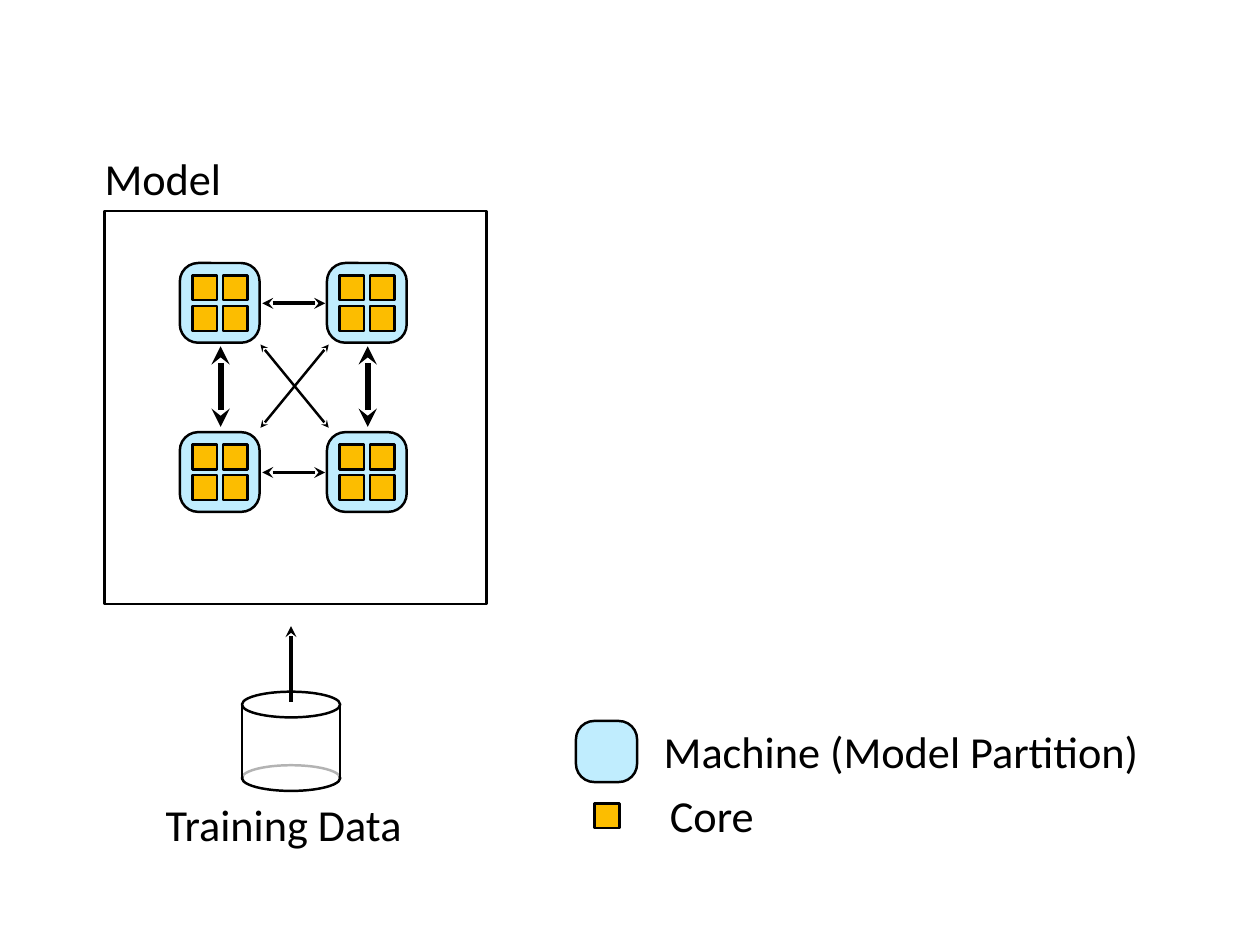
from itertools import product

from lxml.etree import SubElement
from pptx import Presentation
from pptx.dml.color import RGBColor
from pptx.enum.shapes import MSO_CONNECTOR, MSO_SHAPE
from pptx.enum.text import MSO_ANCHOR, MSO_AUTO_SIZE, PP_ALIGN
from pptx.oxml.ns import qn
from pptx.util import Inches, Pt

BLACK = RGBColor(0x00, 0x00, 0x00)
WHITE = RGBColor(0xFF, 0xFF, 0xFF)
MACHINE_BLUE = RGBColor(0xC0, 0xED, 0xFE)
CORE_GOLD = RGBColor(0xFC, 0xBD, 0x00)

# Content: text, left, top, width
LABELS = [
    ("Model", 1.18, 1.67, 1.4),
    ("Machine (Model Partition)", 7.49, 8.14, 5.42),
    ("Core", 7.56, 8.86, 1.18),
    ("Training Data", 1.87, 8.96, 2.82),
]
LABEL_HEIGHT = 0.68
FRAME = (1.18, 2.38, 4.31, 4.44)

# Machine grid and the cores inside each machine
MACHINE_COLUMNS = (2.03, 3.69)
MACHINE_ROWS = (2.97, 4.88)
MACHINE_SIZE = 0.9
CORE_OFFSETS = (0.14, 0.485)
CORE_SIZE = 0.28

# Legend samples
LEGEND_MACHINE = (6.5, 8.14, 0.69, 0.69)
LEGEND_CORE = (6.71, 9.07, CORE_SIZE, CORE_SIZE)

# Training data cylinder
CYLINDER_LEFT, CYLINDER_WIDTH = 2.73, 1.11
CAP_HEIGHT, TOP_CAP, BOTTOM_CAP = 0.29, 7.81, 8.64
VEIL_TOP, VEIL_HEIGHT = 7.99, 0.78
SIDE_TOP, SIDE_BOTTOM = 7.97, 8.81
FEED_TOP, FEED_BOTTOM = 7.07, 7.93

FRAME_FORMAT = {
    "margin_left": 0, "margin_top": 0, "margin_right": 0, "margin_bottom": 0,
    "word_wrap": False, "vertical_anchor": MSO_ANCHOR.MIDDLE,
    "auto_size": MSO_AUTO_SIZE.SHAPE_TO_FIT_TEXT,
}
FONT_FORMAT = {"name": "Calibri", "size": Pt(36)}


def apply_format(target, values):
    for name, value in values.items():
        setattr(target, name, value)


def add_label(page, text, left, top, width):
    box = page.shapes.add_textbox(*map(Inches, (left, top, width, LABEL_HEIGHT)))
    apply_format(box.text_frame, FRAME_FORMAT)
    para = box.text_frame.paragraphs[0]
    para.alignment = PP_ALIGN.LEFT
    span = para.add_run()
    span.text = text
    apply_format(span.font, FONT_FORMAT)
    span.font.color.rgb = BLACK


def add_box(page, kind, place, fill=None, outlined=True, corner=None):
    shape = page.shapes.add_shape(kind, *map(Inches, place))
    shape.shadow.inherit = False
    if corner is not None:
        shape.adjustments[0] = corner
    if fill is None:
        shape.fill.background()
    else:
        shape.fill.solid()
        shape.fill.fore_color.rgb = fill
    if outlined:
        shape.line.color.rgb = BLACK
        shape.line.width = Pt(2)
    else:
        shape.line.fill.background()
    return shape


def add_line(page, start, end, width, arrows=()):
    line = page.shapes.add_connector(
        MSO_CONNECTOR.STRAIGHT, *map(Inches, (*start, *end)))
    line.line.color.rgb = BLACK
    line.line.width = Pt(width)
    outline = line.line._get_or_add_ln()
    for arrow in arrows:
        SubElement(outline, qn(f"a:{arrow}"), type="stealth")
    SubElement(line._element.spPr, qn("a:effectLst"))


def add_machines(page):
    for top, left in product(MACHINE_ROWS, MACHINE_COLUMNS):
        add_box(page, MSO_SHAPE.ROUNDED_RECTANGLE,
                (left, top, MACHINE_SIZE, MACHINE_SIZE), MACHINE_BLUE, corner=0.23)
        for down, across in product(CORE_OFFSETS, repeat=2):
            add_box(page, MSO_SHAPE.RECTANGLE,
                    (left + across, top + down, CORE_SIZE, CORE_SIZE), CORE_GOLD)


def add_links(page):
    both = ("headEnd", "tailEnd")
    # Edges of the space between the machines
    left, right = MACHINE_COLUMNS[0] + MACHINE_SIZE, MACHINE_COLUMNS[1]
    upper, lower = MACHINE_ROWS[0] + MACHINE_SIZE, MACHINE_ROWS[1]
    for column in MACHINE_COLUMNS:
        middle = column + 0.46
        add_line(page, (middle, upper + 0.04), (middle, lower - 0.06), 5, both)
    for row in MACHINE_ROWS:
        middle = row + 0.455
        add_line(page, (left + 0.03, middle), (right - 0.02, middle), 3, both)
    west, east = left + 0.01, right + 0.02
    for start, end in ((west, east), (east, west)):
        add_line(page, (start, upper + 0.02), (end, lower - 0.05), 2, both)


def add_cylinder(page):
    def cap(top):
        add_box(page, MSO_SHAPE.OVAL, (CYLINDER_LEFT, top, CYLINDER_WIDTH, CAP_HEIGHT))

    cap(BOTTOM_CAP)
    # A translucent veil fades the back of the bottom rim
    veil = add_box(page, MSO_SHAPE.RECTANGLE,
                   (CYLINDER_LEFT, VEIL_TOP, CYLINDER_WIDTH, VEIL_HEIGHT),
                   WHITE, outlined=False)
    colour = veil._element.spPr.find(qn("a:solidFill"))[0]
    SubElement(colour, qn("a:alpha"), val="70000")
    cap(TOP_CAP)
    for side in (CYLINDER_LEFT, CYLINDER_LEFT + CYLINDER_WIDTH):
        add_line(page, (side, SIDE_TOP), (side, SIDE_BOTTOM), 2)
    middle = CYLINDER_LEFT + CYLINDER_WIDTH / 2
    add_line(page, (middle, FEED_TOP), (middle, FEED_BOTTOM), 3, ("headEnd",))


def main():
    deck = Presentation()
    deck.slide_width, deck.slide_height = Inches(14.22), Inches(10.67)
    page = deck.slides.add_slide(deck.slide_layouts[6])

    # Model
    add_box(page, MSO_SHAPE.RECTANGLE, FRAME)
    add_machines(page)
    add_links(page)

    # Legend
    add_box(page, MSO_SHAPE.ROUNDED_RECTANGLE, LEGEND_MACHINE, MACHINE_BLUE, corner=0.3)
    add_box(page, MSO_SHAPE.RECTANGLE, LEGEND_CORE, CORE_GOLD)

    # Training data and labels
    add_cylinder(page)
    for label in LABELS:
        add_label(page, *label)
    deck.save("out.pptx")


if __name__ == "__main__":
    main()
